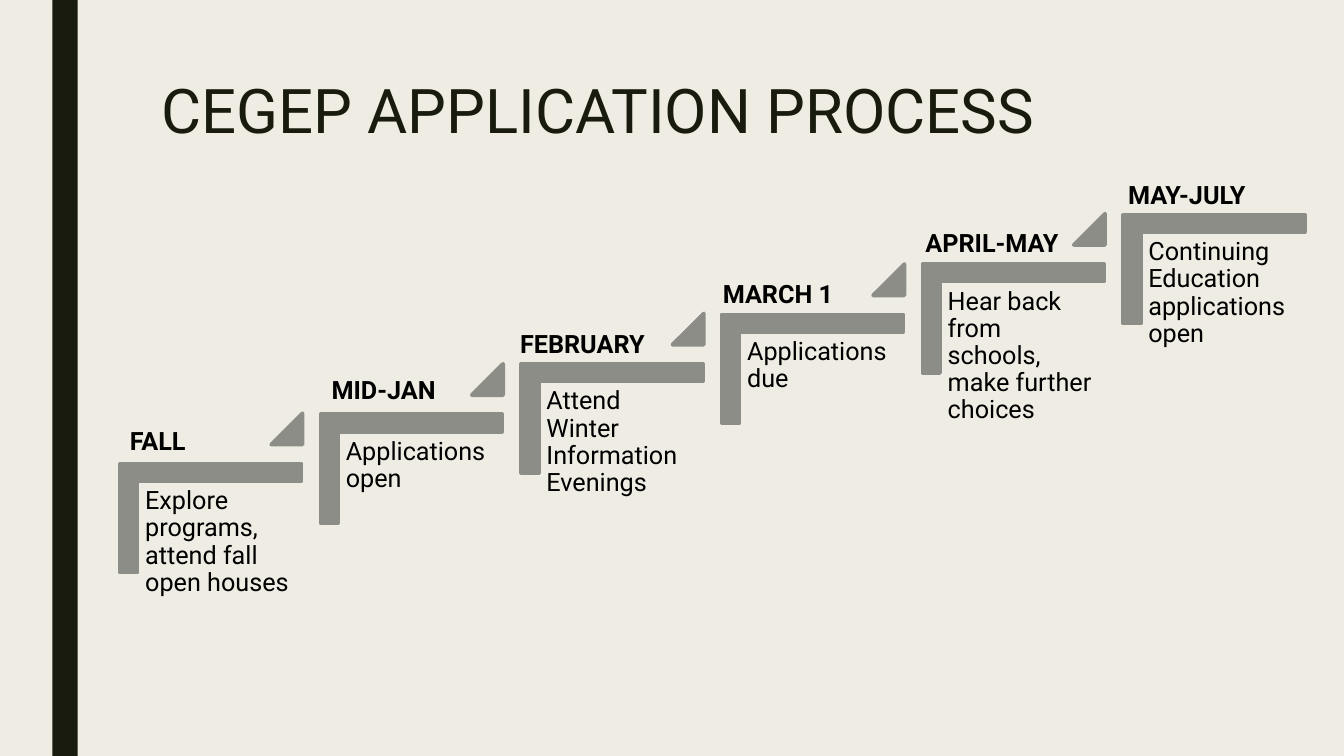
from pptx import Presentation
from pptx import util as u
from pptx.dml.color import RGBColor
from pptx.enum import shapes, text

PX = 9144  # EMU per px, 100 px to the inch
CREAM = RGBColor(0xEF, 0xED, 0xE3)
DARK = RGBColor(0x19, 0x1B, 0x0E)
GREY = RGBColor(0x8C, 0x8D, 0x86)
BLACK = RGBColor(0, 0, 0)

# Month, its label's left and top, and what happens then
STAGES = [
    ("FALL", 119, 417, "Explore programs, attend fall open houses"),
    ("MID-JAN", 319, 366, "Applications open"),
    ("FEBRUARY", 506, 321, "Attend Winter Information Evenings"),
    ("MARCH 1", 707, 271, "Applications due"),
    ("APRIL-MAY", 908, 221, "Hear back from schools, make further choices"),
    ("MAY-JULY", 1109, 173, "Continuing Education applications open"),
]
STEP_RIGHT, STEP_UP = 199, 49.4


def add_solid(kind, left, top, width, height, color, line_width=0):
    shape = page.shapes.add_shape(kind, left * PX, top * PX, width * PX, height * PX)
    shape.shadow.inherit = False
    shape.fill.solid()
    shape.fill.fore_color.rgb = color
    if line_width:
        shape.line.color.rgb = color
        shape.line.width = u.Pt(line_width)
    else:
        shape.line.fill.background()
    return shape


def write(box, words, size, color, bold=False, spacing=1.0):
    frame = box.text_frame
    frame.word_wrap = True
    frame.auto_size = text.MSO_AUTO_SIZE.NONE
    frame.vertical_anchor = text.MSO_ANCHOR.TOP
    para = frame.paragraphs[0]
    para.text = words
    para.alignment = text.PP_ALIGN.LEFT
    para.line_spacing = spacing
    para.font.name = "Roboto"
    para.font.size = u.Pt(size)
    para.font.bold = bold
    para.font.color.rgb = color
    return frame


deck = Presentation()
deck.slide_width, deck.slide_height = 1333 * PX, 750 * PX
page = deck.slides.add_slide(deck.slide_layouts[5])
page.background.fill.solid()
page.background.fill.fore_color.rgb = CREAM

# Side bar and title
add_solid(shapes.MSO_SHAPE.RECTANGLE, 52, 0, 25, 750, DARK)
title = page.shapes.title
title.left, title.top, title.width, title.height = 150 * PX, 75 * PX, 1050 * PX, 162 * PX
write(title, "CEGEP APPLICATION PROCESS", 44, DARK, spacing=0.89)

# Staircase, one step per stage
for index, (month, label_left, label_top, event) in enumerate(STAGES):
    right = index * STEP_RIGHT
    up = round(index * STEP_UP)

    corner = add_solid(shapes.MSO_SHAPE.CORNER, 155 + right, 424 - up, 108, 180, GREY, 2.75)
    corner.rotation = 90
    corner.adjustments[0] = corner.adjustments[1] = 0.16

    event_box = page.shapes.add_textbox(
        (137 + right) * PX, (477 - up) * PX, 163 * PX, 142 * PX)
    frame = write(event_box, event, 18, BLACK, spacing=0.9)
    frame.margin_left = frame.margin_right = 7 * PX
    frame.margin_top = frame.margin_bottom = 7 * PX

    if index < len(STAGES) - 1:
        triangle = add_solid(shapes.MSO_SHAPE.ISOSCELES_TRIANGLE,
                             269 + right, 410 - up, 31, 31, GREY, 2.75)
        triangle.adjustments[0] = 1

    month_box = page.shapes.add_textbox(label_left * PX, label_top * PX, 201 * PX, 41 * PX)
    write(month_box, month, 18, BLACK, bold=True)

deck.save("out.pptx")
